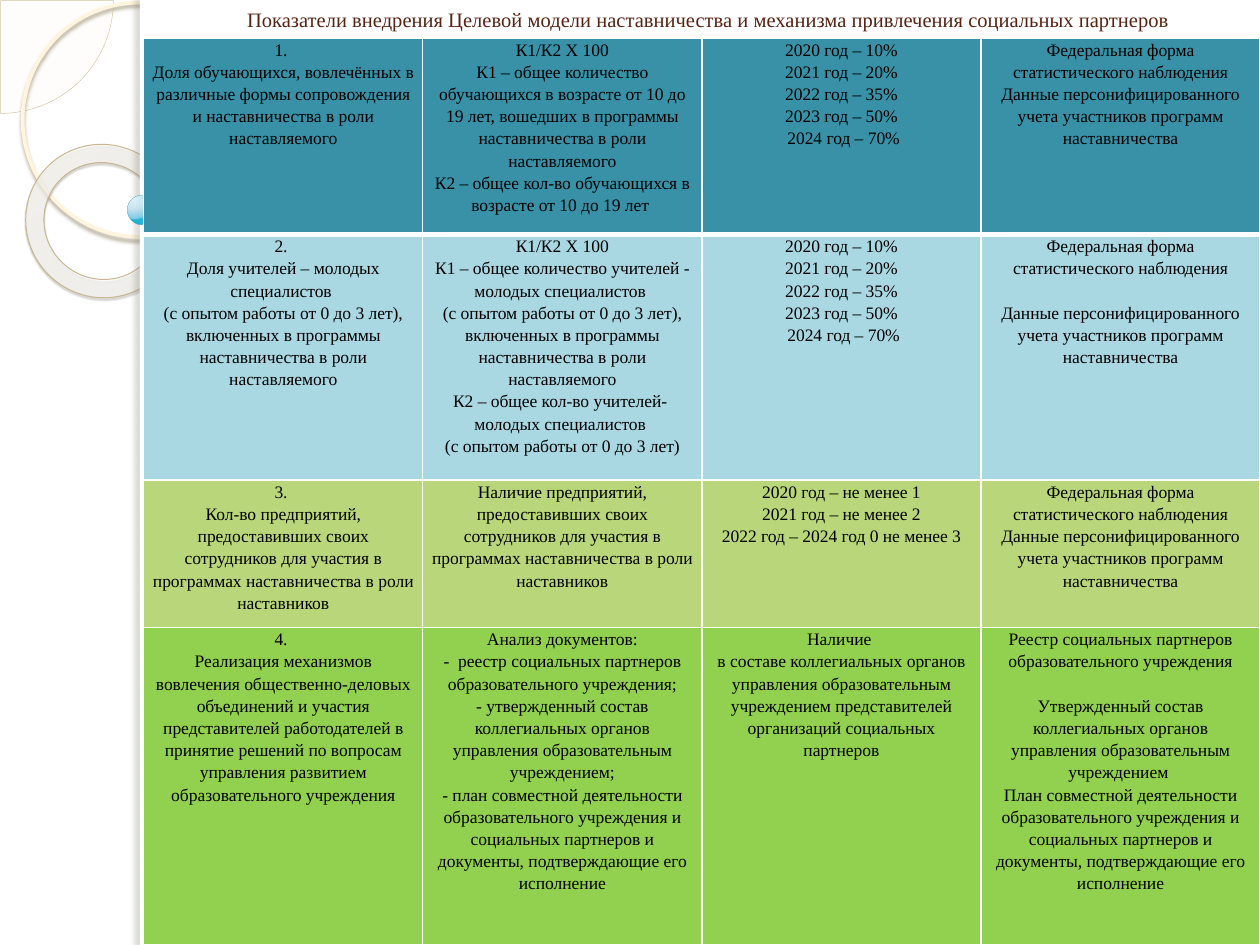
import dataclasses

import lxml.etree
import pptx
import pptx.dml.color
import pptx.enum.shapes
import pptx.enum.text
import pptx.oxml
import pptx.oxml.ns
import pptx.util

Inches = pptx.util.Inches
Pt = pptx.util.Pt
qn = pptx.oxml.ns.qn
Kind = pptx.enum.shapes.MSO_SHAPE


@dataclasses.dataclass(frozen=True)
class Theme:
    font: str = "Times New Roman"
    title_size: float = 11.7
    cell_size: float = 10
    line_spacing: float = 1.15
    gap: float = 12.7
    title: str = "572314"
    text: str = "000000"
    white: str = "FFFFFF"
    rows: tuple = ("3891A7", "A9D7E2", "B9D77A", "92D050")


THEME = Theme()
GAP = None  # leaves one line free above the next paragraph
TITLE = ("Показатели внедрения Целевой модели наставничества "
         "и механизма привлечения социальных партнеров")
FORMULA = "К1/К2 X 100"
SHARES = ["2020 год – 10%", "2021 год – 20%", "2022 год – 35%",
          "2023 год – 50%", " 2024 год – 70%"]
FEDERAL = "Федеральная форма статистического наблюдения"
PERSONAL = "Данные персонифицированного учета участников программ наставничества"
NOVICES = ("(с опытом работы от 0 до 3 лет), включенных в программы "
           "наставничества в роли наставляемого")
MENTORS = ("предприятий, предоставивших своих сотрудников для участия "
           "в программах наставничества в роли наставников")
JOINT_PLAN = ("лан совместной деятельности образовательного учреждения и социальных "
              "партнеров и документы, подтверждающие его исполнение")
ROW_HEIGHTS = (1.56, 1.95, 1.17, 2.52)
INDICATORS = [
    [["1. ", "Доля обучающихся, вовлечённых в различные формы сопровождения "
      "и наставничества в роли наставляемого"],
     [FORMULA,
      "К1 – общее количество обучающихся в возрасте от 10 до 19 лет, вошедших "
      "в программы наставничества в роли наставляемого",
      "К2 – общее кол-во обучающихся в возрасте от 10 до 19 лет "],
     SHARES,
     [FEDERAL, PERSONAL]],
    [["2. ", "Доля учителей – молодых специалистов ", NOVICES],
     [FORMULA, "К1 – общее количество учителей - молодых специалистов ", NOVICES,
      "К2 – общее кол-во учителей-  молодых специалистов ",
      "(с опытом работы от 0 до 3 лет)"],
     SHARES,
     [FEDERAL, GAP, PERSONAL]],
    [["3. ", "Кол-во " + MENTORS],
     ["Наличие " + MENTORS],
     ["2020 год – не менее 1", "2021 год – не менее 2",
      "2022 год – 2024 год 0 не менее 3"],
     [FEDERAL, PERSONAL]],
    [["4. ", "Реализация механизмов вовлечения общественно-деловых объединений "
      "и участия представителей работодателей в принятие решений по вопросам "
      "управления развитием образовательного учреждения"],
     ["Анализ документов:",
      "-  реестр социальных партнеров образовательного учреждения;",
      "- утвержденный состав коллегиальных органов управления образовательным "
      "учреждением;",
      "- п" + JOINT_PLAN],
     ["Наличие ", "в составе коллегиальных органов управления образовательным "
      "учреждением представителей организаций социальных партнеров"],
     ["Реестр социальных партнеров образовательного учреждения", GAP,
      "Утвержденный состав коллегиальных органов управления образовательным "
      "учреждением ",
      "П" + JOINT_PLAN]],
]


def rgb(value):
    return pptx.dml.color.RGBColor.from_string(value)


def add_color(parent, value, alpha=100):
    color = lxml.etree.SubElement(parent, qn("a:srgbClr"), val=value)
    lxml.etree.SubElement(color, qn("a:alpha"), val=str(alpha * 1000))


def add_figure(page, kind, box, fill=None, line=None, line_width=1):
    figure = page.shapes.add_shape(kind, *map(Inches, box))
    figure.shadow.inherit = False
    if fill:
        figure.fill.solid()
        figure.fill.fore_color.rgb = rgb(fill)
    else:
        figure.fill.background()
    if line:
        figure.line.color.rgb = rgb(line)
        figure.line.width = Pt(line_width)
    else:
        figure.line.fill.background()
    return figure


def set_alpha(figure, part, percent):
    """Make the fill (a:solidFill) or line (a:ln/a:solidFill) translucent."""
    color = figure.element.spPr.xpath(f"{part}/a:srgbClr")[0]
    lxml.etree.SubElement(color, qn("a:alpha"), val=str(percent * 1000))


def set_radial_fill(figure, stops, focus):
    """Replace an empty fill by a circular gradient of (position, colour, alpha)."""
    gradient = lxml.etree.Element(qn("a:gradFill"))
    stop_list = lxml.etree.SubElement(gradient, qn("a:gsLst"))
    for position, color, alpha in stops:
        stop = lxml.etree.SubElement(stop_list, qn("a:gs"), pos=str(position * 1000))
        add_color(stop, color, alpha)
    circle = lxml.etree.SubElement(gradient, qn("a:path"), {"path": "circle"})
    edges = {side: str(value * 1000) for side, value in zip("ltrb", focus)}
    lxml.etree.SubElement(circle, qn("a:fillToRect"), edges)
    properties = figure.element.spPr
    properties.replace(properties.find(qn("a:noFill")), gradient)


def set_shadow(figure, color, alpha, blur, distance, angle):
    effects = figure.element.spPr.find(qn("a:effectLst"))
    shadow = lxml.etree.SubElement(
        effects, qn("a:outerShdw"), blurRad=str(Pt(blur)), dist=str(Pt(distance)),
        dir=str(angle * 60000), algn="tl", rotWithShape="0")
    add_color(shadow, color, alpha)


def add_ornament(page, left, top, height):
    """Rings on the left edge, partly covered by the white content panel."""
    sector = add_figure(page, Kind.PIE, (left - 0.89, top - 0.89, 1.79, 1.79),
                        "FEFAF4", "D3C39F", 0.25)
    sector.adjustments[0], sector.adjustments[1] = 0, 54
    set_alpha(sector, "a:solidFill", 33)

    circle = add_figure(page, Kind.OVAL, (left + 0.18, top + 0.02, 1.86, 1.86),
                        line="FFF5DE", line_width=2.15)
    set_shadow(circle, "B0A68F", 85, 2, 2, 90)

    ring = add_figure(page, Kind.DONUT, (left + 0.2, top + 1.15, 1.23, 1.21),
                      line="C7B893", line_width=0.58)
    ring.rotation = 38.6
    ring.adjustments[0] = 0.12
    set_radial_fill(ring, [(0, "FFFCF6", 70), (70, "FFFEFB", 55), (100, "F0D28E", 60)],
                    (-408, -50, 508, 150))
    set_shadow(ring, "5A5444", 35, 1, 1.2, 75)

    add_figure(page, Kind.RECTANGLE, (left + 1.11, top, 8.89, height), THEME.white)
    edge = add_figure(page, Kind.RECTANGLE, (left + 1.11, top, 0.08, height), THEME.white)
    set_shadow(edge, "736F63", 25, 3, 3, 180)

    bead = add_figure(page, Kind.OVAL, (left + 1.01, top + 1.55, 0.23, 0.23),
                      line="308EA5", line_width=0.16)
    set_alpha(bead, "a:ln/a:solidFill", 60)
    set_radial_fill(bead, [(0, "DAF4FF", 95), (50, "C3E3F0", 90),
                           (95, "6BC7E8", 88), (100, "00ABD5", 85)], (25, 12, 75, 88))


def style_para(para, size, color):
    para.alignment = pptx.enum.text.PP_ALIGN.CENTER
    para.font.name, para.font.size = THEME.font, Pt(size)
    para.font.color.rgb = rgb(color)


def add_title(page, left, top, width, height):
    frame = page.shapes.add_textbox(*map(Inches, (left, top, width, height))).text_frame
    frame.word_wrap = True
    frame.vertical_anchor = pptx.enum.text.MSO_ANCHOR.BOTTOM
    frame.text = TITLE
    style_para(frame.paragraphs[0], THEME.title_size, THEME.title)


def set_borders(cell, top, bottom):
    properties = cell._tc.get_or_add_tcPr()
    widths = {"a:lnL": 1, "a:lnR": 1, "a:lnT": top, "a:lnB": bottom}
    for place, (tag, width) in enumerate(widths.items()):
        border = lxml.etree.Element(qn(tag), w=str(Pt(width)))
        add_color(lxml.etree.SubElement(border, qn("a:solidFill")), THEME.white)
        properties.insert(place, border)


def fill_cell(cell, lines, color):
    cell.margin_left = cell.margin_right = Inches(0.07)
    cell.margin_top = cell.margin_bottom = 0
    cell.fill.solid()
    cell.fill.fore_color.rgb = rgb(color)
    frame = cell.text_frame
    frame.text = "\n".join(line for line in lines if line is not GAP)
    for para in frame.paragraphs:
        style_para(para, THEME.cell_size, THEME.text)
        para.line_spacing = THEME.line_spacing
    if GAP in lines:
        frame.paragraphs[lines.index(GAP)].space_before = Pt(THEME.gap)


def add_indicators(page, left, top, width, height):
    count = len(INDICATORS[0])
    table = page.shapes.add_table(len(INDICATORS), count,
                                  *map(Inches, (left, top, width, height))).table
    table.first_row = table.horz_banding = False
    for column in table.columns:
        column.width = Inches(width / count)
    for index, (contents, share, color) in enumerate(
            zip(INDICATORS, ROW_HEIGHTS, THEME.rows)):
        table.rows[index].height = Inches(height * share / sum(ROW_HEIGHTS))
        for cell, lines in zip(table.rows[index].cells, contents):
            fill_cell(cell, lines, color)
            set_borders(cell, 3 if index == 1 else 1, 3 if index == 0 else 1)


def main():
    deck = pptx.Presentation()
    deck.slide_width, deck.slide_height = Inches(10), Inches(7.5)
    page = deck.slides.add_slide(deck.slide_layouts[6])
    add_ornament(page, 0, 0, 7.5)
    add_title(page, 1.57, 0, 8.1, 0.3)
    add_indicators(page, 1.14, 0.3, 8.86, 7.2)
    deck.save("out.pptx")


if __name__ == "__main__":
    main()
